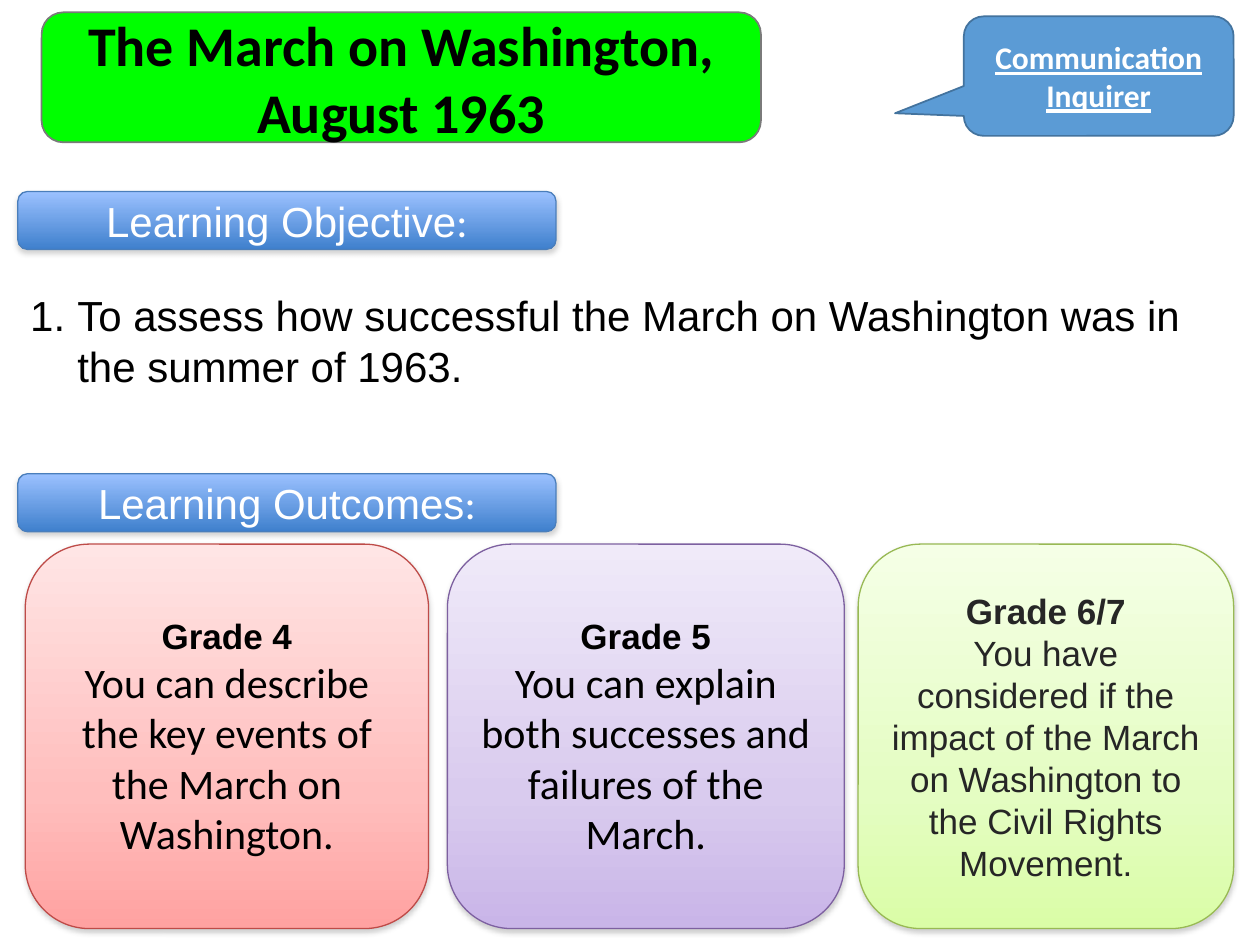
from lxml import etree
from pptx import Presentation
from pptx import util as u
from pptx.dml.color import RGBColor
from pptx.enum import shapes, text
from pptx.oxml.ns import qn

ROUND = shapes.MSO_SHAPE.ROUNDED_RECTANGLE
CALLOUT = shapes.MSO_SHAPE.ROUNDED_RECTANGULAR_CALLOUT


def rgb(code):
    return RGBColor.from_string(code)


def sub(node, tag, **attrs):
    return etree.SubElement(node, qn(tag), {k: str(v) for k, v in attrs.items()})


def write(para, words, size=24, font="Arial", color="000000", bold=False,
          line=False, align=text.PP_ALIGN.CENTER):
    """Add one formatted run to a paragraph."""
    para.alignment = align
    run = para.add_run()
    run.text = words
    f = run.font
    f.size, f.name, f.bold, f.underline = u.Pt(size), font, bold, line
    f.color.rgb = rgb(color)


def shade(shape, stops):
    """Fill from top to bottom with (percent, colour) stops."""
    grad = etree.Element(qn("a:gradFill"), rotWithShape="1")
    stop_list = sub(grad, "a:gsLst")
    for pos, color in stops:
        stop = sub(stop_list, "a:gs", pos=pos * 1000)
        sub(stop, "a:srgbClr", val=color)
    sub(grad, "a:lin", ang=5400000, scaled=0)
    shape._element.spPr.find(qn("a:prstGeom")).addnext(grad)


def drop(shape, alpha, dist):
    """Cast a soft grey shadow straight down."""
    effects = shape._element.spPr.find(qn("a:effectLst"))
    shadow = sub(effects, "a:outerShdw", blurRad=u.Pt(3.1), dist=u.Pt(dist),
                 dir=5400000, rotWithShape=0)
    tint = sub(shadow, "a:srgbClr", val="808080")
    sub(tint, "a:alpha", val=alpha * 1000)


def panel(slide, box, fill, edge, width=0.75, kind=ROUND):
    """Add a rounded shape; fill is one colour or a list of stops."""
    shape = slide.shapes.add_shape(kind, *map(u.Cm, box))
    shape.shadow.inherit = False
    shape.line.color.rgb = rgb(edge)
    shape.line.width = u.Pt(width)
    if isinstance(fill, str):
        shape.fill.solid()
        shape.fill.fore_color.rgb = rgb(fill)
    else:
        shade(shape, fill)
    frame = shape.text_frame
    frame.word_wrap = True
    frame.vertical_anchor = text.MSO_ANCHOR.MIDDLE
    return shape


def title(slide, box):
    shape = panel(slide, box, "00FF00", "7A7A7A", 1)
    write(shape.text_frame.paragraphs[0], "The March on Washington, August 1963",
          size=32, font="Calibri", bold=True)


def skills(slide, box):
    shape = panel(slide, box, "5B9BD5", "43739E", 1, CALLOUT)
    for i, value in enumerate((-0.755, 0.311, 0.167)):
        shape.adjustments[i] = value
    frame = shape.text_frame
    for para, words in ((frame.paragraphs[0], "Communication"),
                        (frame.add_paragraph(), "Inquirer")):
        write(para, words, size=18, font="Calibri", color="FFFFFF",
              bold=True, line=True)


def banner(slide, box, words):
    shape = panel(slide, box, [(0, "9BC1FF"), (100, "3F80CD")], "4A7EBB")
    drop(shape, 35, 1.8)
    para = shape.text_frame.paragraphs[0]
    write(para, words, color="FFFFFF")
    write(para, ":", font="Calibri", color="FFFFFF")


def card(slide, box, colors, edge, grade, words, color="000000", **body):
    shape = panel(slide, box, list(zip((0, 65, 100), colors)), edge)
    drop(shape, 38, 1.6)
    frame = shape.text_frame
    write(frame.paragraphs[0], grade, size=20, color=color, bold=True)
    write(frame.add_paragraph(), words, color=color, **body)


def goal(slide, box, words):
    frame = slide.shapes.add_textbox(*map(u.Cm, box)).text_frame
    frame.word_wrap = True
    para = frame.paragraphs[0]
    props = para._p.get_or_add_pPr()
    indent = u.Cm(0.95)
    props.set("marL", str(indent))
    props.set("indent", str(-indent))
    sub(props, "a:buFont", typeface="+mj-lt")
    sub(props, "a:buAutoNum", type="arabicPeriod")
    write(para, words, align=text.PP_ALIGN.LEFT)


def main():
    deck = Presentation()
    deck.slide_width, deck.slide_height = u.Cm(25.4), u.Cm(19.05)
    slide = deck.slides.add_slide(deck.slide_layouts[6])

    # Section banners
    for top, words in ((3.86, "Learning Objective"), (9.55, "Learning Outcomes")):
        banner(slide, (0.36, top, 10.85, 1.17), words)

    # Outcome cards
    top, high = 10.97, 7.75
    card(slide, (0.51, top, 8.13, high), ("FFE5E5", "FFBEBD", "FFA2A1"), "BE4B48",
         "Grade 4", "You can describe the key events of the March on Washington.",
         font="Calibri")
    card(slide, (9.02, top, 8, high), ("F0EAF9", "D9CBEE", "C9B5E8"), "7D60A0",
         "Grade 5", "You can explain both successes and failures of the March.",
         font="Calibri")
    card(slide, (17.3, top, 7.57, high), ("F5FFE6", "E4FDC2", "DAFDA7"), "98B954",
         "Grade 6/7", "You have considered if the impact of the March on "
         "Washington to the Civil Rights Movement.", color="262626", size=20)

    # Objective and heading
    goal(slide, (0.36, 5.72, 23.88, 2.31),
         "To assess how successful the March on Washington was in the summer of 1963.")
    title(slide, (0.84, 0.25, 14.5, 2.62))
    skills(slide, (19.43, 0.33, 5.44, 2.41))

    deck.save("out.pptx")


if __name__ == "__main__":
    main()
